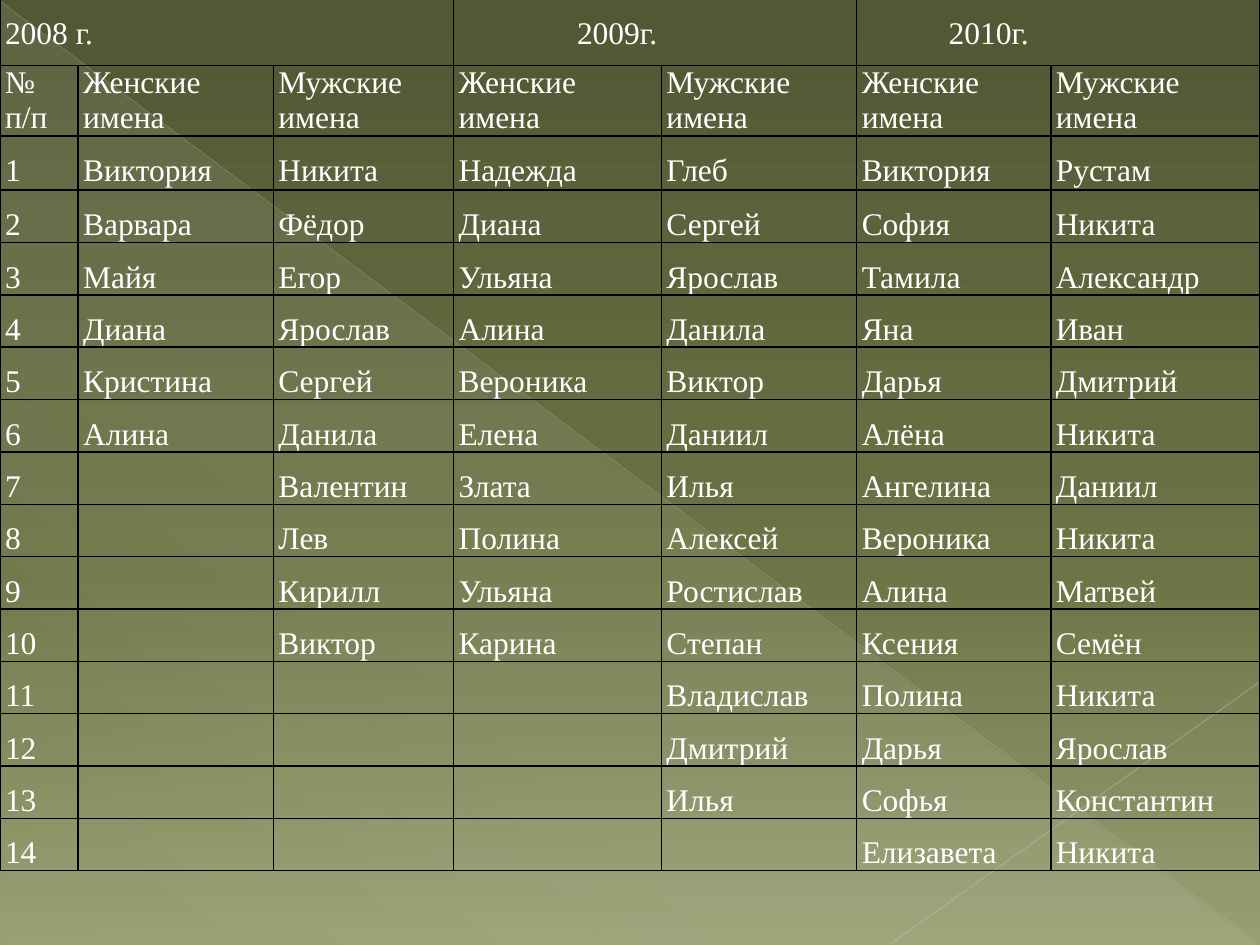
from pptx import Presentation
from pptx.dml.color import RGBColor
from pptx.enum.shapes import MSO_CONNECTOR, MSO_SHAPE
from pptx.enum.text import PP_ALIGN
from pptx.oxml.ns import qn
from pptx.util import Inches, Pt
from lxml import etree

STRAIGHT = MSO_CONNECTOR.STRAIGHT
RIGHT_TRIANGLE = MSO_SHAPE.RIGHT_TRIANGLE
JUSTIFY = PP_ALIGN.JUSTIFY

FONT = "Times New Roman"
WHITE = RGBColor(0xFF, 0xFF, 0xFF)
BLACK = RGBColor(0x00, 0x00, 0x00)
DARK_OLIVE = RGBColor(0x52, 0x57, 0x34)
OLIVE = RGBColor(0x6D, 0x73, 0x45)
LIGHT_OLIVE = RGBColor(0x99, 0x9F, 0x73)
CREAM = RGBColor(0xEA, 0xEB, 0xDE)
LONG_LINE = RGBColor(0xC1, 0xC3, 0xB9)
SHORT_LINE = RGBColor(0xC8, 0xC9, 0xC1)


def add_color(parent, color, opacity=100):
    element = etree.SubElement(parent, qn("a:srgbClr"), val=str(color))
    if opacity < 100:
        etree.SubElement(element, qn("a:alpha"), val=str(opacity * 1000))


def set_gradient(fill, owner, angle, stops):
    """Give the first gradient inside owner its stops: (position, colour, opacity)."""
    fill.gradient()
    gradient = owner.find(".//" + qn("a:gradFill"))
    for child in list(gradient):
        gradient.remove(child)
    stop_list = etree.SubElement(gradient, qn("a:gsLst"))
    for position, color, opacity in stops:
        stop = etree.SubElement(stop_list, qn("a:gs"), pos=str(position * 1000))
        add_color(stop, color, opacity)
    etree.SubElement(gradient, qn("a:lin"), ang=str(angle * 60000), scaled="0")


presentation = Presentation()
presentation.slide_width = Inches(10)
presentation.slide_height = Inches(7.5)
slide = presentation.slides.add_slide(presentation.slide_layouts[6])

# Background
set_gradient(slide.background.fill, slide._element, 90,
             [(0, DARK_OLIVE, 100), (60, OLIVE, 100), (100, LIGHT_OLIVE, 100)])

# Translucent triangle
triangle = slide.shapes.add_shape(
    RIGHT_TRIANGLE, Inches(0.01), Inches(0.02), Inches(9.98), Inches(7.48))
triangle.shadow.inherit = False
triangle.line.fill.background()
set_gradient(triangle.fill, triangle._element, 133,
             [(0, CREAM, 10), (70, CREAM, 8), (100, CREAM, 1)])

# Thin diagonal lines
for x1, y1, x2, y2, color, width, opacity in [
    (0, 0.01, 9.99, 7.49, LONG_LINE, 0.39, 35),
    (10, 5.41, 7.07, 7.49, SHORT_LINE, 0.47, 45),
]:
    diagonal = slide.shapes.add_connector(
        STRAIGHT, Inches(x1), Inches(y1), Inches(x2), Inches(y2))
    diagonal.line.width = Pt(width)
    diagonal.line.fill.solid()
    solid_fill = diagonal._element.spPr.find(".//" + qn("a:solidFill"))
    for child in list(solid_fill):
        solid_fill.remove(child)
    add_color(solid_fill, color, opacity)
    etree.SubElement(diagonal._element.spPr, qn("a:effectLst"))

# Table contents
years = ["2008 г.", "", "", "2009г.", "", "2010г.", ""]
year_indents = {3: 0.94, 5: 0.69}
year_spans = [(0, 2), (3, 4), (5, 6)]
headings = ["№\nп/п"] + ["Женские имена", "Мужские имена"] * 3
names = [
    ["Виктория", "Никита", "Надежда", "Глеб", "Виктория", "Рустам"],
    ["Варвара", "Фёдор", "Диана", "Сергей", "София", "Никита"],
    ["Майя", "Егор", "Ульяна", "Ярослав", "Тамила", "Александр"],
    ["Диана", "Ярослав", "Алина", "Данила", "Яна", "Иван"],
    ["Кристина", "Сергей", "Вероника", "Виктор", "Дарья", "Дмитрий"],
    ["Алина", "Данила", "Елена", "Даниил", "Алёна", "Никита"],
    ["", "Валентин", "Злата", "Илья", "Ангелина", "Даниил"],
    ["", "Лев", "Полина", "Алексей", "Вероника", "Никита"],
    ["", "Кирилл", "Ульяна", "Ростислав", "Алина", "Матвей"],
    ["", "Виктор", "Карина", "Степан", "Ксения", "Семён"],
    ["", "", "", "Владислав", "Полина", "Никита"],
    ["", "", "", "Дмитрий", "Дарья", "Ярослав"],
    ["", "", "", "Илья", "Софья", "Константин"],
    ["", "", "", "", "Елизавета", "Никита"],
]
rows = [years, headings]
rows += [[str(number)] + row for number, row in enumerate(names, 1)]
column_widths = [0.62, 1.55, 1.43, 1.65, 1.55, 1.54, 1.66]
row_heights = [0.53, 0.56, 0.43] + [0.41] * 13

# Table grid
table = slide.shapes.add_table(
    len(rows), len(column_widths), Inches(0), Inches(-0.01),
    Inches(sum(column_widths)), Inches(sum(row_heights))).table
table.first_row = False
table.horz_banding = False
for column, width in zip(table.columns, column_widths):
    column.width = Inches(width)
for table_row, height in zip(table.rows, row_heights):
    table_row.height = Inches(height)
for first, last in year_spans:
    table.cell(0, first).merge(table.cell(0, last))

# Cell text and borders
for row_index, row in enumerate(rows):
    for column_index, text in enumerate(row):
        cell = table.cell(row_index, column_index)
        cell.fill.background()
        cell.margin_left = cell.margin_right = Inches(0.04)
        cell.margin_top = cell.margin_bottom = Inches(0)
        for position, side in enumerate(["a:lnL", "a:lnR", "a:lnT", "a:lnB"]):
            border = etree.Element(qn(side), w=str(Pt(1)))
            add_color(etree.SubElement(border, qn("a:solidFill")), BLACK)
            cell._tc.tcPr.insert(position, border)
        if not text:
            continue
        for line_index, line in enumerate(text.split("\n")):
            frame = cell.text_frame
            paragraph = frame.add_paragraph() if line_index else frame.paragraphs[0]
            paragraph.alignment = JUSTIFY
            if row_index != 1:
                paragraph.line_spacing = 1.5
            if row_index == 0 and column_index in year_indents:
                indent = Inches(year_indents[column_index])
                paragraph._p.get_or_add_pPr().set("marL", str(indent))
            run = paragraph.add_run()
            run.text = line
            run.font.name = FONT
            run.font.size = Pt(18)
            run.font.color.rgb = WHITE

presentation.save("out.pptx")
